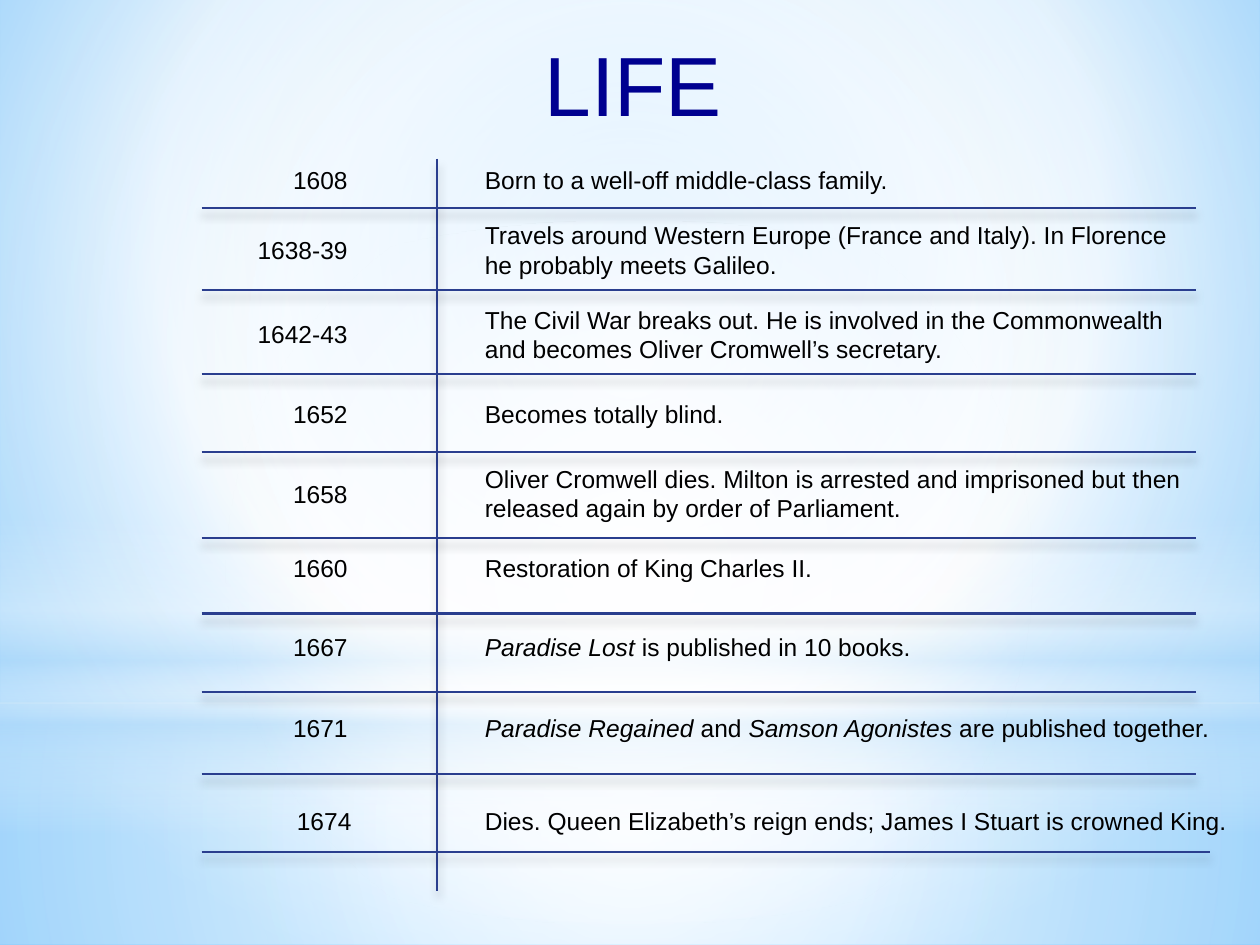
from dataclasses import dataclass

from lxml import etree
from pptx import Presentation
from pptx.dml.color import RGBColor
from pptx.enum import shapes, text
from pptx.oxml.ns import qn
from pptx.util import Inches, Pt

COLORS = {"title": "000090", "text": "000000", "rule": "2A3E8E", "white": "FFFFFF",
          "sky": "B4DCFA", "bright sky": "9ED5FF", "deep sky": "5BB9FF"}
FONT = "Arial"
YEAR_RIGHT, EVENT_LEFT = 2.91, 3.75
RULE_LEFT, RULE_RIGHT, AXIS_X = 1.6, 9.49, 3.47
CENTER = (50, 50, 50, 50)


@dataclass
class Stop:
    position: int
    color: str
    opacity: int = 100


@dataclass
class Glow:
    kind: shapes.MSO_SHAPE
    top: float
    height: float
    stops: list[Stop]
    focus: tuple | None = CENTER


@dataclass
class Entry:
    """One row of the timeline; asterisks enclose italic words in the event."""
    year: str
    event: str
    top: float
    rule_y: float
    event_width: float = 5.74
    event_top: float | None = None
    year_left: float = 0.98
    year_right: float = YEAR_RIGHT
    rule_right: float = RULE_RIGHT


GLOWS = [
    Glow(shapes.MSO_SHAPE.RECTANGLE, 5.58, 1.92,
         [Stop(0, "white", 91), Stop(37, "white", 76), Stop(100, "sky", 79)]),
    Glow(shapes.MSO_SHAPE.RECTANGLE, 0, 5.58,
         [Stop(0, "white", 89), Stop(48, "white", 62), Stop(100, "sky", 79)]),
    Glow(shapes.MSO_SHAPE.RECTANGLE, 4.12, 2.5,
         [Stop(0, "white", 0), Stop(29, "white", 30), Stop(45, "sky", 40),
          Stop(55, "white", 26), Stop(65, "sky", 60), Stop(100, "white", 0)], None),
    Glow(shapes.MSO_SHAPE.OVAL, 1.75, 5.58, [Stop(0, "white"), Stop(56, "white", 0)]),
]

ENTRIES = [
    Entry("1608", "Born to a well-off middle-class family.", 1.26, 1.65, year_left=0.91),
    Entry("1638-39", "Travels around Western Europe (France and Italy). "
          "In Florence he probably meets Galileo.", 1.82, 2.3, event_top=1.7, year_left=0.38),
    Entry("1642-43", "The Civil War breaks out. He is involved in the Commonwealth "
          "and becomes Oliver Cromwell’s secretary.", 2.48, 2.97, 5.95, 2.37),
    Entry("1652", "Becomes totally blind.", 3.12, 3.59),
    Entry("1658", "Oliver Cromwell dies. Milton is arrested and imprisoned "
          "but then released again by order of Parliament.", 3.75, 4.27, 5.73, 3.63),
    Entry("1660", "Restoration of King Charles II.", 4.34, 4.87, 3.06),
    Entry("1667", "*Paradise Lost* is published in 10 books.", 4.97, 5.49, 3.86),
    Entry("1671", "*Paradise Regained* and *Samson Agonistes* are published together.",
          5.61, 6.14, 6.26),
    Entry("1674", "Dies. Queen Elizabeth’s reign ends; James I Stuart is crowned King.",
          6.35, 6.76, 6.26, year_right=2.94, rule_right=9.6),
]


def rgb(name: str) -> RGBColor:
    return RGBColor.from_string(COLORS[name])


def add_element(parent, tag: str, **attributes):
    values = {key: str(value) for key, value in attributes.items()}
    return etree.SubElement(parent, qn(tag), values)


def add_color(parent, color: str, opacity: int) -> None:
    element = add_element(parent, "a:srgbClr", val=COLORS[color])
    add_element(element, "a:alpha", val=opacity * 1000)


def set_gradient(fill, parent, stops: list[Stop], focus: tuple | None) -> None:
    """Fill with a circular gradient around focus, or a vertical one without focus."""
    fill.solid()
    solid = parent.find(qn("a:solidFill"))
    gradient = etree.Element(qn("a:gradFill"), rotWithShape="1")
    stop_list = add_element(gradient, "a:gsLst")
    for stop in stops:
        element = add_element(stop_list, "a:gs", pos=stop.position * 1000)
        add_color(element, stop.color, stop.opacity)
    if focus:
        circle = add_element(gradient, "a:path", path="circle")
        sides = {side: value * 1000 for side, value in zip("ltrb", focus)}
        add_element(circle, "a:fillToRect", **sides)
    else:
        add_element(gradient, "a:lin", ang=90 * 60000, scaled=0)
    parent.replace(solid, gradient)


def add_backdrop(slide) -> None:
    fill = slide.background.fill
    fill.solid()
    properties = slide.element.find(".//" + qn("p:bgPr"))
    stops = [Stop(0, "bright sky"), Stop(60, "white"), Stop(100, "deep sky")]
    set_gradient(fill, properties, stops, (20, 10, 20, 60))
    for glow in GLOWS:
        shape = slide.shapes.add_shape(glow.kind, 0, Inches(glow.top),
                                       Inches(10), Inches(glow.height))
        shape.shadow.inherit = False
        shape.line.fill.background()
        set_gradient(shape.fill, shape.element.spPr, glow.stops, glow.focus)


def format_title(slide) -> None:
    title = slide.shapes.title
    title.element.getparent().append(title.element)  # in front of the backdrop
    title.left, title.top = Inches(0.34), Inches(0.15)
    title.width, title.height = Inches(9.32), Inches(1.11)
    frame = title.text_frame
    frame.text = "LIFE"
    frame.vertical_anchor = text.MSO_ANCHOR.TOP
    frame.margin_left, frame.margin_top = Inches(0.15), Inches(0.11)
    paragraph = frame.paragraphs[0]
    paragraph.alignment = text.PP_ALIGN.CENTER
    paragraph.font.name, paragraph.font.size = FONT, Pt(48)
    paragraph.font.color.rgb = rgb("title")


def add_text(slide, words: str, left: float, top: float, width: float, height: float):
    box = slide.shapes.add_textbox(Inches(left), Inches(top), Inches(width), Inches(height))
    frame = box.text_frame
    frame.word_wrap = True
    frame.auto_size = text.MSO_AUTO_SIZE.SHAPE_TO_FIT_TEXT
    paragraph = frame.paragraphs[0]
    paragraph.font.name, paragraph.font.size = FONT, Pt(14)
    paragraph.font.color.rgb = rgb("text")
    for index, part in enumerate(words.split("*")):
        if part:
            run = paragraph.add_run()
            run.text = part
            if index % 2:
                run.font.italic = True
    return frame


def add_rule(slide, x1: float, y1: float, x2: float, y2: float) -> None:
    rule = slide.shapes.add_connector(shapes.MSO_CONNECTOR.STRAIGHT, Inches(x1), Inches(y1),
                                      Inches(x2), Inches(y2))
    rule.line.color.rgb = rgb("rule")
    rule.line.width = Pt(1.25)
    effects = add_element(rule.element.spPr, "a:effectLst")
    shadow = add_element(effects, "a:outerShdw", blurRad=Pt(5), dist=Pt(4),
                         dir=90 * 60000, rotWithShape=0)
    add_color(shadow, "text", 20)


def add_entry(slide, entry: Entry) -> None:
    year = add_text(slide, entry.year, entry.year_left, entry.top,
                    entry.year_right - entry.year_left, 0.34)
    year.margin_right = Inches(0.15)
    year.paragraphs[0].alignment = text.PP_ALIGN.RIGHT
    two_lines = entry.event_top is not None
    add_text(slide, entry.event, EVENT_LEFT, entry.event_top if two_lines else entry.top,
             entry.event_width, 0.57 if two_lines else 0.34)


def main() -> None:
    presentation = Presentation()
    presentation.slide_width, presentation.slide_height = Inches(10), Inches(7.5)
    slide = presentation.slides.add_slide(presentation.slide_layouts[5])
    add_backdrop(slide)
    format_title(slide)
    for entry in ENTRIES:
        add_entry(slide, entry)
    add_rule(slide, AXIS_X, 1.26, AXIS_X, 7.07)
    for entry in ENTRIES:
        add_rule(slide, RULE_LEFT, entry.rule_y, entry.rule_right, entry.rule_y)
    presentation.save("out.pptx")


if __name__ == "__main__":
    main()
